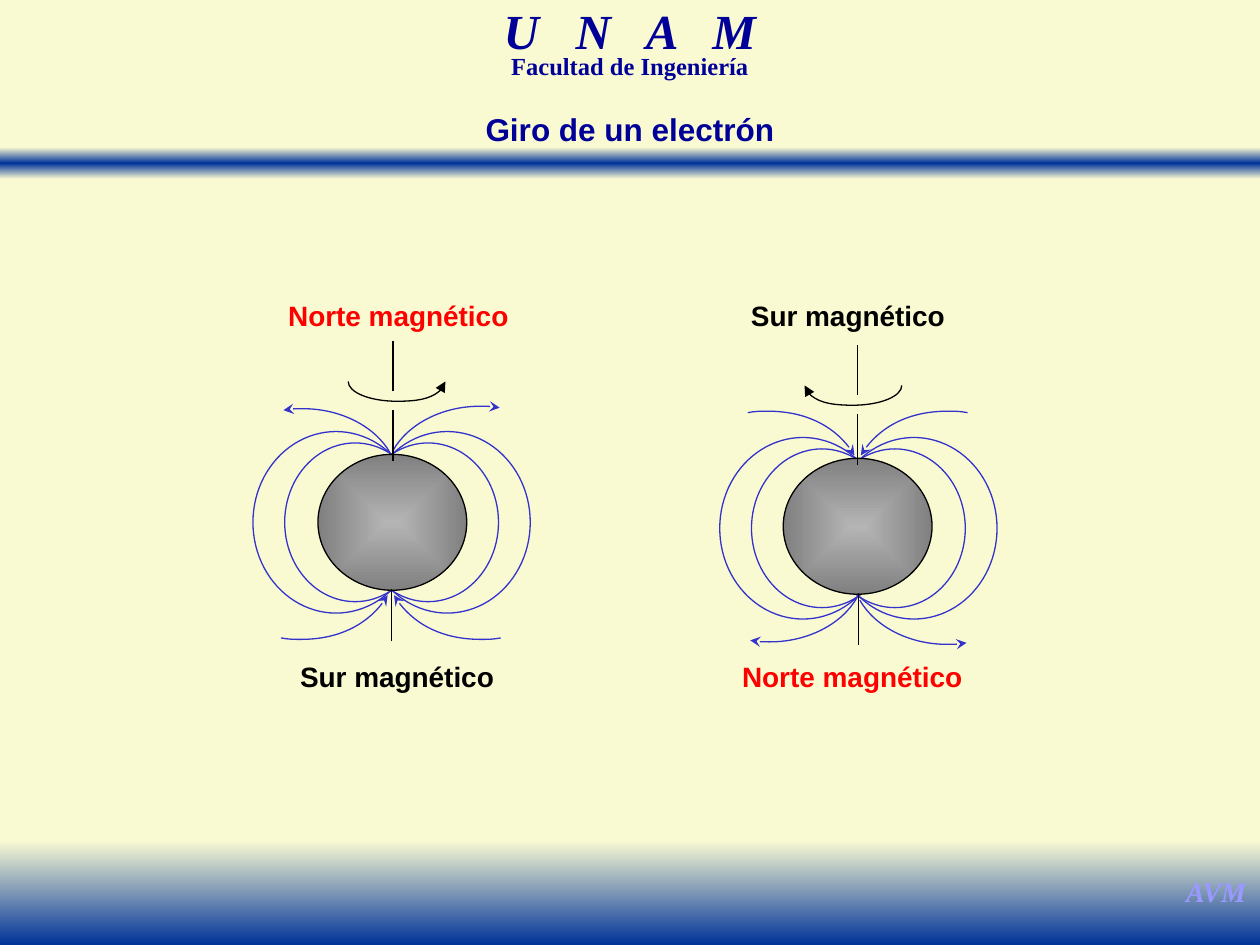
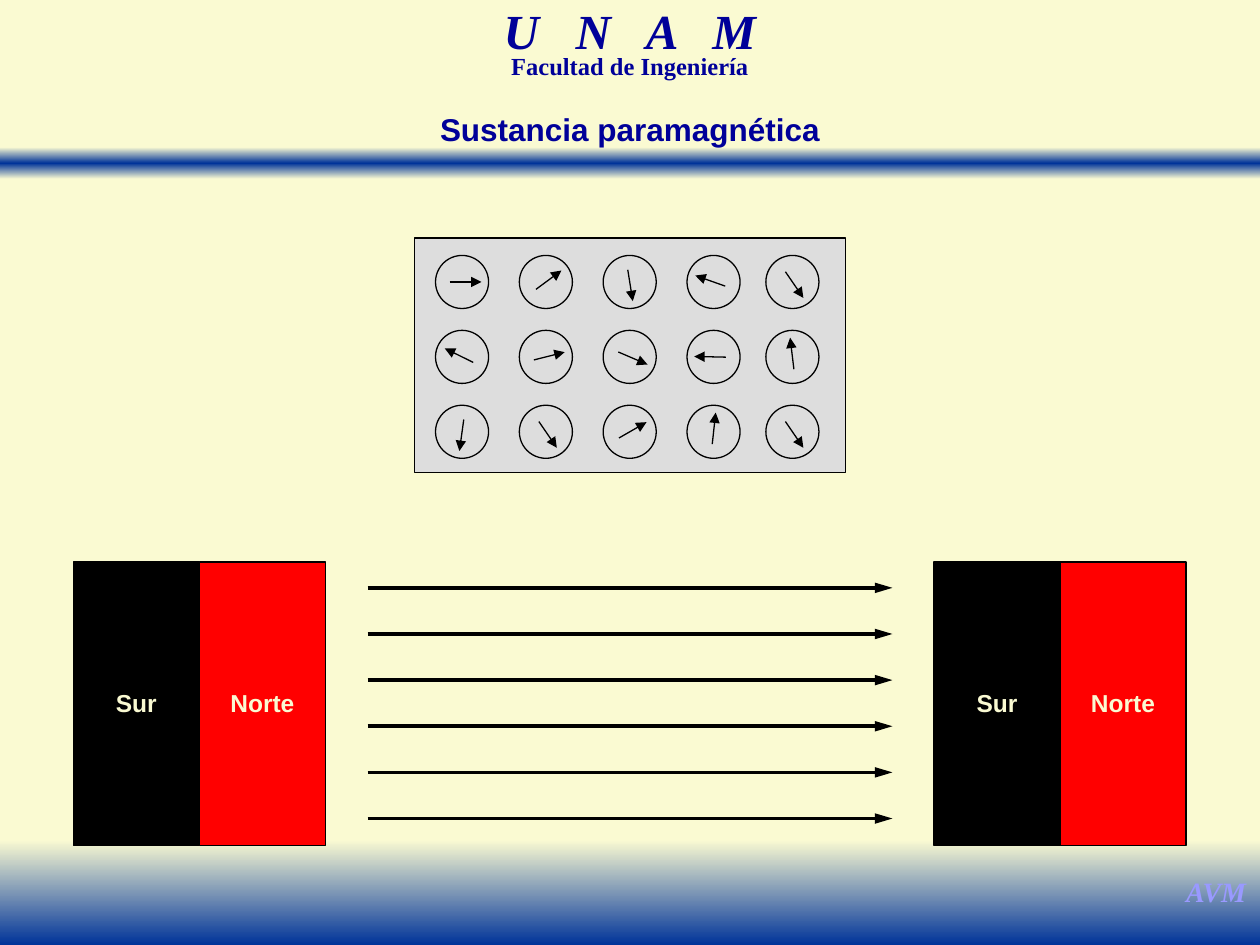
from collections import namedtuple
from dataclasses import dataclass
from math import cos, radians, sin

from lxml.etree import SubElement as Sub
from pptx import Presentation
from pptx.dml.color import RGBColor as Rgb
from pptx.enum.shapes import MSO_CONNECTOR as Link, MSO_SHAPE as Form
from pptx.enum.text import PP_ALIGN as Align
from pptx.oxml.ns import qn
from pptx.util import Cm, Pt

Box = namedtuple("Box", "x y w h")


@dataclass(frozen=True)
class Theme:
    cream: str = "FAFAD2"
    blue: str = "003399"
    navy: str = "000099"
    lilac: str = "9999FF"
    flux: str = "3333CC"
    black: str = "000000"
    red: str = "FF0000"
    pale: str = "DDDDDD"
    light: str = "B4B4B4"
    dark: str = "808080"
    sans: str = "Arial"
    serif: str = "Times New Roman"
    crest: int = 28
    title: int = 18
    label: int = 16
    small: int = 14
    thin: float = 0.75
    thick: float = 2


T = Theme()
PAGE = Box(0, 0, 25.4, 19.05)


def write(slide, box, text, size=T.label, color=T.black, font=T.sans, italic=False,
          align=Align.LEFT, lead=None, track=None, wrap=True, inset=True):
    area = slide.shapes.add_textbox(*map(Cm, box))
    frame = area.text_frame
    frame.word_wrap = wrap
    if not inset:
        frame.margin_left = frame.margin_right = 0
        frame.margin_top = frame.margin_bottom = 0
    para = frame.paragraphs[0]
    para.alignment = align
    if lead:
        para.line_spacing = lead
    run = para.add_run()
    run.text = text
    face = run.font
    face.name, face.size = font, Pt(size)
    face.bold, face.italic = True, italic
    face.color.rgb = Rgb.from_string(color)
    if track:
        run._r.get_or_add_rPr().set("spc", str(track * 100))


def stroke(item, color=T.black, width=T.thin, head=None, tail=None, reach="med"):
    item.line.color.rgb = Rgb.from_string(color)
    item.line.width = Pt(width)
    edge = item.element.spPr.find(qn("a:ln"))
    for name, kind in (("a:headEnd", head), ("a:tailEnd", tail)):
        if kind:
            Sub(edge, qn(name), type=kind, w="med", len=reach)


def shade(item, colors, radial=False):
    item.fill.background()
    props = item.element.spPr
    blank = props.find(qn("a:noFill"))
    grad = Sub(props, qn("a:gradFill"))
    stops = Sub(grad, qn("a:gsLst"))
    for i, color in enumerate(colors):
        stop = Sub(stops, qn("a:gs"), pos=str(100000 * i // (len(colors) - 1)))
        Sub(stop, qn("a:srgbClr"), val=color)
    if radial:
        way = Sub(grad, qn("a:path"), path="shape")
        Sub(way, qn("a:fillToRect"), {side: "50000" for side in "ltrb"})
    else:
        Sub(grad, qn("a:lin"), ang="5400000", scaled="0")
    props.replace(blank, grad)


def draw(slide, form, box, fill=None, line=T.black):
    item = slide.shapes.add_shape(form, *map(Cm, box))
    item.shadow.inherit = False
    if fill:
        item.fill.solid()
        item.fill.fore_color.rgb = Rgb.from_string(fill)
    else:
        item.fill.background()
    if line:
        stroke(item, line)
    else:
        item.line.fill.background()
    return item


def join(slide, x1, y1, x2, y2, **style):
    item = slide.shapes.add_connector(Link.STRAIGHT, *map(Cm, (x1, y1, x2, y2)))
    stroke(item, **style)
    Sub(item.element.spPr, qn("a:effectLst"))


def curve(slide, knots, **style):
    dots = [(Cm(x), Cm(y)) for x, y in knots]
    pen = slide.shapes.build_freeform(*dots[0])
    pen.add_line_segments(dots[1:], close=False)
    item = pen.convert_to_shape()
    route = item.element.spPr.find(".//" + qn("a:path"))
    legs = route.findall(qn("a:lnTo"))
    for i in range(0, len(legs), 3):
        bend = Sub(route, qn("a:cubicBezTo"))
        for leg in legs[i:i + 3]:
            bend.append(leg[0])
            route.remove(leg)
    item.shadow.inherit = False
    item.fill.background()
    stroke(item, **style)


def base(deck, title):
    slide = deck.slides.add_slide(deck.slide_layouts[6])
    back = slide.background.fill
    back.solid()
    back.fore_color.rgb = Rgb.from_string(T.cream)
    band = draw(slide, Form.RECTANGLE, Box(0, 2.97, PAGE.w, 0.64), line=None)
    shade(band, (T.cream, T.blue, T.cream))
    write(slide, Box(7.72, 0.2, 9.96, 1.09), "U N A M", size=T.crest, color=T.navy,
          font=T.serif, italic=True, align=Align.CENTER, lead=0.7, track=7)
    write(slide, Box(8.15, 1.07, 9.1, 0.66), "Facultad de Ingeniería", size=T.small,
          color=T.navy, font=T.serif, align=Align.CENTER, lead=0.7)
    foot = draw(slide, Form.RECTANGLE, Box(0, 16.94, PAGE.w, 2.11), line=None)
    shade(foot, (T.cream, T.blue))
    write(slide, Box(23.64, 17.5, 1.75, 0.94), "AVM", color=T.lilac, font=T.serif,
          italic=True, align=Align.CENTER, wrap=False)
    write(slide, Box(7.2, 2.09, 11, 1.02), title, size=T.title, color=T.navy,
          align=Align.CENTER)
    return slide


def field(slide, box, up):
    for inset, w, h in ((0, 3.35, 3.66), (0.64, 2.84, 3.2)):
        top = box.y + (box.h - h) / 2
        for left in (inset, box.w - inset - w):
            draw(slide, Form.OVAL, Box(box.x + left, top, w, h), line=T.flux)
    mx, my = box.x + box.w / 2, box.y + box.h / 2
    arc = ((0, 0), (0.3, 0.53), (0.99, 0.89), (1.75, 0.89),
           (1.88, 0.89), (2.01, 0.89), (2.15, 0.86))
    leaves = ((-0.03, -1.4, -1, -1), (0.03, -1.45, 1, -1),
              (0.05, 1.47, 1, 1), (-0.08, 1.47, -1, 1))
    for x, y, sx, sy in leaves:
        knots = [(mx + x + sx * dx, my + up * (y + sy * dy)) for dx, dy in arc]
        end = "tail" if sy < 0 else "head"
        curve(slide, knots, color=T.flux, **{end: "stealth"})


def body(slide, box, side):
    ball = draw(slide, Form.OVAL, box)
    shade(ball, (T.light, T.dark), radial=True)
    mx, my = box.x + box.w / 2, box.y + box.h / 2
    for x, y1, y2 in ((-0.02, 1.35, 2.39), (0.01, -1.24, -2.26), (0.01, -2.64, -3.66)):
        join(slide, mx + side * x, my + y1, mx + side * x, my + y2)
    spin = ((1.07, -2.84), (1.07, -2.62), (0.64, -2.44), (0.1, -2.44),
            (-0.46, -2.44), (-0.89, -2.62), (-0.89, -2.84))
    curve(slide, [(mx + side * x, my + y) for x, y in spin], head="triangle")


def magnet(slide, box):
    half = box.w / 2
    for i, (text, fill, w) in enumerate((("Sur", T.black, 0.84), ("Norte", T.red, 1.3))):
        left = box.x + i * half
        draw(slide, Form.RECTANGLE, Box(left, box.y, half, box.h), fill)
        tag = Box(left + (half - w) / 2, box.y + 2.54, w, 0.61)
        write(slide, tag, text, size=T.small, color=T.cream,
              align=Align.CENTER, wrap=False, inset=False)


def flow(slide, box, count=6):
    for i in range(count):
        y = box.y + i * box.h / (count - 1)
        join(slide, box.x, y, box.x + box.w, y, width=T.thick,
             tail="triangle", reach="lg")


def panel(slide, box):
    draw(slide, Form.RECTANGLE, box, T.pale)
    turns = ((0, 323.5, 81, 199.6, 55.6),
             (206.3, 345.8, 23.2, 181.2, 263.2),
             (97.9, 55.6, 330.1, 276.2, 55.6))
    cols = [0.42 + 1.69 * i for i in range(4)] + [7.08]
    size = 1.07
    for j, row in enumerate(turns):
        for col, turn in zip(cols, row):
            x, y = box.x + col, box.y + 0.35 + 1.51 * j
            draw(slide, Form.OVAL, Box(x, y, size, size), T.pale)
            mx, my = x + size / 2, y + size / 2
            dx, dy = cos(radians(turn)), sin(radians(turn))
            join(slide, mx - 0.25 * dx, my - 0.25 * dy,
                 mx + 0.39 * dx, my + 0.39 * dy, tail="triangle")


def spins(deck):
    slide = base(deck, "Giro de un electrón")
    field(slide, Box(5.1, 8.7, 5.59, 3.66), 1)
    body(slide, Box(6.41, 9.16, 3, 2.74), 1)
    field(slide, Box(14.51, 8.82, 5.59, 3.66), -1)
    body(slide, Box(15.79, 9.24, 3, 2.74), -1)
    north, south = "Norte magnético", "Sur magnético"
    high, low = 5.9, 13.18
    for x, y, w, text, color in ((5.56, high, 5.33, north, T.red),
                                 (5.8, low, 4.7, south, T.black),
                                 (14.71, low, 5.26, north, T.red),
                                 (14.89, high, 4.78, south, T.black)):
        write(slide, Box(x, y, w, 0.94), text, color=color)


def matter(deck):
    slide = base(deck, "Sustancia paramagnética")
    for x in (1.48, 18.83):
        magnet(slide, Box(x, 11.33, 5.08, 5.72))
    flow(slide, Box(7.41, 11.85, 10.58, 4.65))
    panel(slide, Box(8.36, 4.8, 8.69, 4.72))


def main():
    deck = Presentation()
    deck.slide_width, deck.slide_height = Cm(PAGE.w), Cm(PAGE.h)
    spins(deck)
    matter(deck)
    deck.save("out.pptx")


if __name__ == "__main__":
    main()
